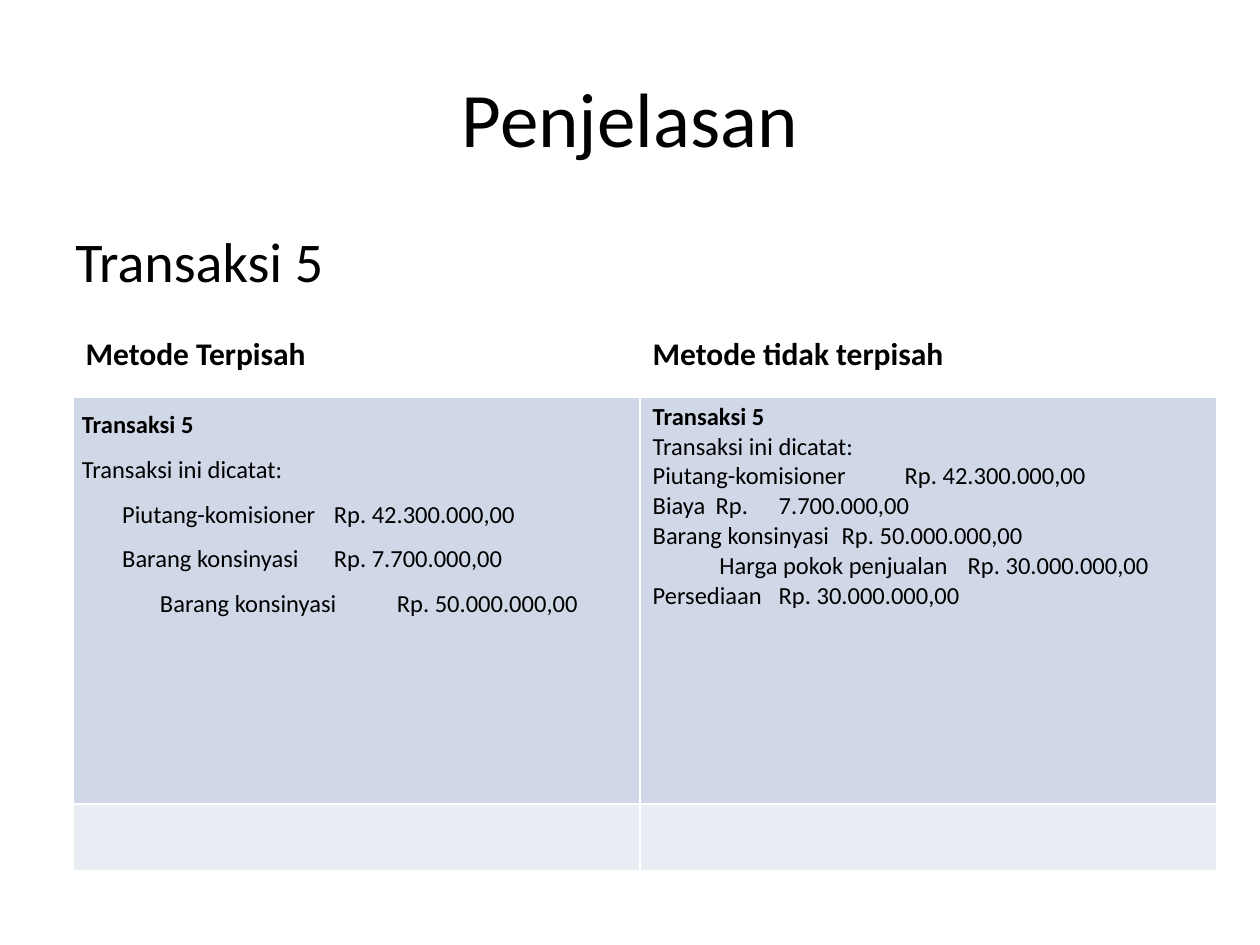
"""Build a slide comparing the journal entries of two consignment methods."""
from lxml import etree
from pptx import Presentation
from pptx.dml.color import RGBColor
from pptx.enum.text import MSO_ANCHOR, PP_ALIGN
from pptx.oxml.ns import qn
from pptx.util import Inches, Pt

CENTER, LEFT = PP_ALIGN.CENTER, PP_ALIGN.LEFT
MIDDLE, TOP = MSO_ANCHOR.MIDDLE, MSO_ANCHOR.TOP
BLACK = RGBColor(0x00, 0x00, 0x00)
WHITE = RGBColor(0xFF, 0xFF, 0xFF)
ENTRY_FILL = RGBColor(0xD0, 0xD8, 0xE8)
FOOTER_FILL = RGBColor(0xE9, 0xED, 0xF4)
FONT = "Calibri"

HEADINGS = [
    ("Penjelasan", (0.5, 0.3, 9, 1.25), 44, CENTER, MIDDLE, 0),
    ("Transaksi 5", (0.5, 1.75, 9, 4.95), 32, LEFT, TOP, 2),
]
METHODS = ["Metode Terpisah", "Metode tidak terpisah"]
INTRO = [("Transaksi 5", 0, []), ("Transaksi ini dicatat:", 0, [])]
ENTRIES = [
    INTRO + [
        ("Piutang-komisioner\tRp. 42.300.000,00", 0.32, [2.17]),
        ("Barang konsinyasi\tRp. 7.700.000,00", 0.32, [2.17]),
        ("Barang konsinyasi\tRp. 50.000.000,00", 0.62, [2.6]),
    ],
    INTRO + [
        ("Piutang-komisioner\tRp. 42.300.000,00", 0, [1.84]),
        ("Biaya\tRp.\t7.700.000,00", 0, [1.87, 2.26]),
        ("Barang konsinyasi\tRp. 50.000.000,00", 0, [2.06]),
        ("Harga pokok penjualan\tRp. 30.000.000,00", 0.53, [2.43]),
        ("Persediaan\tRp. 30.000.000,00", 0, [2.1]),
    ],
]
LINE_SPACINGS = [1.5, 1]
TABLE_BOX = (0.58, 2.61, 9.08, 4.3)
COLUMN_WIDTHS = [4.5, 4.58]
ROW_HEIGHTS = [0.53, 3.24, 0.53]
ROW_FILLS = [None, ENTRY_FILL, FOOTER_FILL]


def style_runs(paragraph, size, bold=False):
    for run in paragraph.runs:
        run.font.name = FONT
        run.font.size = Pt(size)
        run.font.bold = bold
        run.font.color.rgb = BLACK


def add_heading(slide, text, box, size, alignment, anchor, space_before):
    text_frame = slide.shapes.add_textbox(*map(Inches, box)).text_frame
    text_frame.word_wrap = True
    text_frame.vertical_anchor = anchor
    text_frame.text = text
    paragraph = text_frame.paragraphs[0]
    paragraph.alignment = alignment
    paragraph.space_before = Pt(space_before)
    style_runs(paragraph, size)


def style_cell(cell, fill_color, bottom_width):
    properties = cell._tc.get_or_add_tcPr()
    for side, width in (("L", 1), ("R", 1), ("T", 1), ("B", bottom_width)):
        line = etree.SubElement(properties, qn(f"a:ln{side}"), w=str(Pt(width)))
        solid = etree.SubElement(line, qn("a:solidFill"))
        etree.SubElement(solid, qn("a:srgbClr"), val=str(WHITE))
    if fill_color is None:
        cell.fill.background()
    else:
        cell.fill.solid()
        cell.fill.fore_color.rgb = fill_color


def set_indent_and_tabs(paragraph, indent, tabs):
    properties = paragraph._p.get_or_add_pPr()
    properties.set("marL", "0")
    properties.set("indent", str(Inches(indent)))
    if tabs:
        tab_list = etree.SubElement(properties, qn("a:tabLst"))
        for position in tabs:
            etree.SubElement(tab_list, qn("a:tab"), pos=str(Inches(position)), algn="l")


def fill_entries(cell, entries, line_spacing):
    text_frame = cell.text_frame
    text_frame.text = "\n".join(text for text, _, _ in entries)
    for index, (paragraph, entry) in enumerate(zip(text_frame.paragraphs, entries)):
        paragraph.line_spacing = line_spacing
        set_indent_and_tabs(paragraph, *entry[1:])
        style_runs(paragraph, 14, bold=index == 0)


def add_journal_table(slide):
    table = slide.shapes.add_table(
        len(ROW_HEIGHTS), len(COLUMN_WIDTHS), *map(Inches, TABLE_BOX)).table
    table.first_row = False
    table.horz_banding = False
    for column, width in zip(table.columns, COLUMN_WIDTHS):
        column.width = Inches(width)
    for index, (row, height) in enumerate(zip(table.rows, ROW_HEIGHTS)):
        row.height = Inches(height)
        for cell in row.cells:
            style_cell(cell, ROW_FILLS[index], 3 if index == 0 else 1)
    for column, method in enumerate(METHODS):
        header = table.cell(0, column)
        header.text_frame.text = method
        style_runs(header.text_frame.paragraphs[0], 18, bold=True)
        fill_entries(table.cell(1, column), ENTRIES[column], LINE_SPACINGS[column])
    first_entry = table.cell(1, 0)
    first_entry.margin_left = first_entry.margin_right = Inches(0.07)
    first_entry.margin_top = first_entry.margin_bottom = 0


def main():
    presentation = Presentation()
    presentation.slide_width = Inches(10)
    presentation.slide_height = Inches(7.5)
    slide = presentation.slides.add_slide(presentation.slide_layouts[6])
    for heading in HEADINGS:
        add_heading(slide, *heading)
    add_journal_table(slide)
    presentation.save("out.pptx")


if __name__ == "__main__":
    main()
